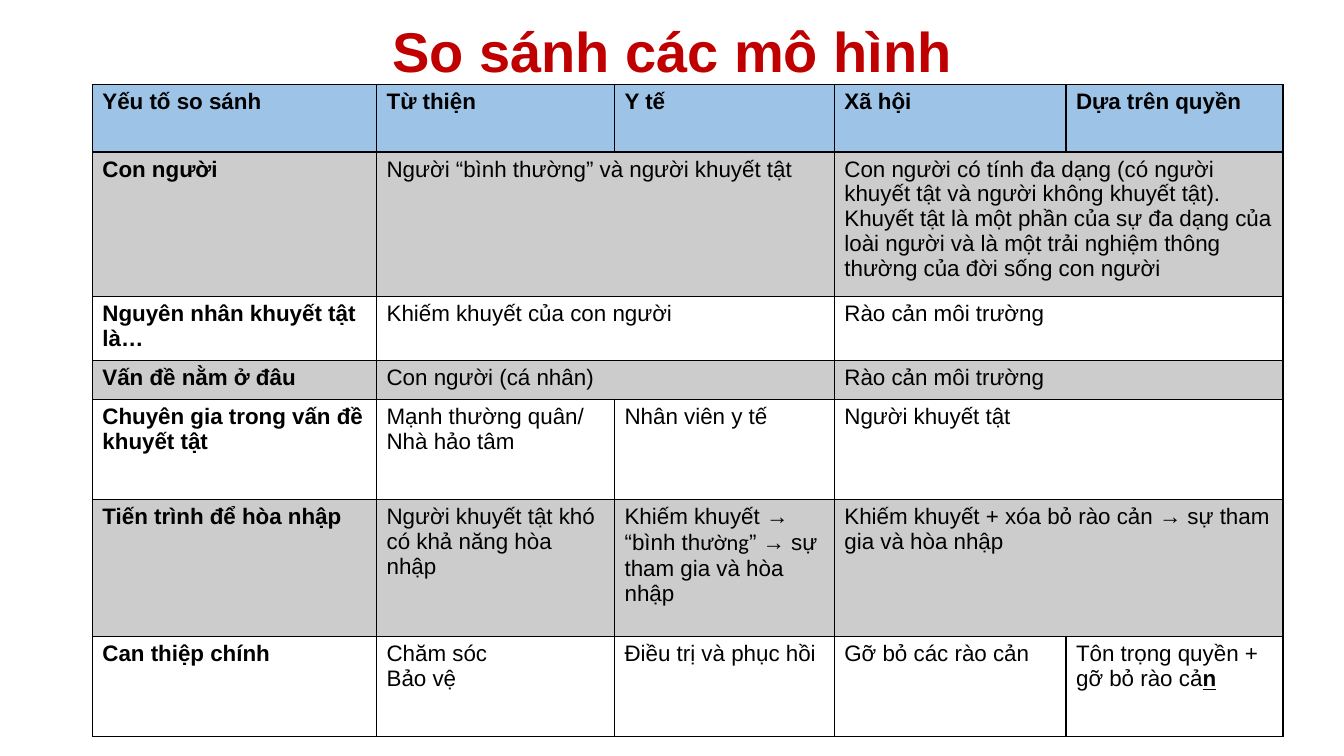
from lxml import etree
from pptx import Presentation
from pptx.dml.color import RGBColor
from pptx.enum import text
from pptx.oxml import ns
from pptx.util import Pt

COLORS = {"title": "C00000", "ink": "000000", "header": "9DC3E6", "band": "000000"}
BAND_ALPHA = 20
TITLE_FONT = {"name": "Arial", "size": Pt(40), "bold": True}
CELL_FONT = {"name": "Arial", "size": Pt(16), "bold": False}

COLUMNS = [203, 170, 157, 165.5, 155]
ROWS = [48, 96.5, 43, 28, 71.5, 98, 71.5]
BANDED = {1, 3, 5}

# None continues the cell on its left; a list holds runs with their own format.
CELLS = [
    ["Yếu tố so sánh", "Từ thiện", "Y tế", "Xã hội", "Dựa trên quyền"],
    ["Con người", "Người “bình thường” và người khuyết tật", None,
     "Con người có tính đa dạng (có người khuyết tật và người không khuyết tật). "
     "Khuyết tật là một phần của sự đa dạng của loài người và là một trải nghiệm "
     "thông thường của đời sống con người", None],
    ["Nguyên nhân khuyết tật là…", "Khiếm khuyết của con người", None,
     "Rào cản môi trường", None],
    ["Vấn đề nằm ở đâu", "Con người (cá nhân)", None, "Rào cản môi trường", None],
    ["Chuyên gia trong vấn đề khuyết tật", "Mạnh thường quân/\nNhà hảo tâm",
     "Nhân viên y tế", "Người khuyết tật", None],
    ["Tiến trình để hòa nhập", "Người khuyết tật khó có khả năng hòa nhập",
     [("Khiếm khuyết → “bình th", {}), ("ường", {"name": "Calibri"}),
      ("” → sự tham gia và hòa nhập", {})],
     "Khiếm khuyết + xóa bỏ rào cản → sự tham gia và hòa nhập", None],
    ["Can thiệp chính", "Chăm sóc\nBảo vệ", "Điều trị và phục hồi", "Gỡ bỏ các rào cản",
     [("Tôn trọng quyền + gỡ bỏ rào cả", {}), ("n", {"bold": True, "underline": True})]],
]


def add_run(p, words, color, **font):
    r = p.add_run()
    r.text = words
    r.font.color.rgb = RGBColor.from_string(COLORS[color])
    for name, value in font.items():
        setattr(r.font, name, value)


def write_cell(tf, content, bold):
    paragraphs = content if isinstance(content, list) else content.split("\n")
    if isinstance(content, list):
        paragraphs = [content]
    else:
        paragraphs = [[(line, {})] for line in paragraphs]
    for i, runs in enumerate(paragraphs):
        p = tf.add_paragraph() if i else tf.paragraphs[0]
        for words, font in runs:
            add_run(p, words, "ink", **{**CELL_FONT, "bold": bold, **font})


def set_border(cell, side, width):
    ln = etree.SubElement(cell._tc.get_or_add_tcPr(), ns.qn(f"a:ln{side}"), w=str(Pt(width)))
    fill = etree.SubElement(ln, ns.qn("a:solidFill"))
    etree.SubElement(fill, ns.qn("a:srgbClr"), val=COLORS["ink"])


def fill_cell(cell, row):
    if row and row not in BANDED:
        cell.fill.background()
        return
    cell.fill.solid()
    cell.fill.fore_color.rgb = RGBColor.from_string(COLORS["band" if row else "header"])
    if row:
        color = cell._tc.tcPr.find(".//" + ns.qn("a:solidFill"))
        color = cell._tc.tcPr.findall(ns.qn("a:solidFill"))[-1][0]
        etree.SubElement(color, ns.qn("a:alpha"), val=str(BAND_ALPHA * 1000))


def add_title(s, left, top, width, height):
    tf = s.shapes.add_textbox(Pt(left), Pt(top), Pt(width), Pt(height)).text_frame
    tf.word_wrap = True
    tf.vertical_anchor = text.MSO_ANCHOR.MIDDLE
    p = tf.paragraphs[0]
    p.alignment = text.PP_ALIGN.CENTER
    p.line_spacing = 0.9
    add_run(p, "So sánh các mô hình", "title", **TITLE_FONT)


def add_comparison(s, left, top):
    table = s.shapes.add_table(len(ROWS), len(COLUMNS), Pt(left), Pt(top),
                               Pt(sum(COLUMNS)), Pt(sum(ROWS))).table
    table.first_row = table.horz_banding = False
    for column, width in zip(table.columns, COLUMNS):
        column.width = Pt(width)
    for row, height in zip(table.rows, ROWS):
        row.height = Pt(height)
    for r, contents in enumerate(CELLS):
        for c, content in enumerate(contents):
            cell = table.cell(r, c)
            for side in "LRTB":
                heavy = (r, side) in ((0, "B"), (1, "T"))
                set_border(cell, side, 2 if heavy else 1)
            fill_cell(cell, r)
            if content is None:
                table.cell(r, c - 1).merge(cell)
            else:
                write_cell(cell.text_frame, content, bold=r == 0 or c == 0)


def main():
    prs = Presentation()
    prs.slide_width, prs.slide_height = Pt(960), Pt(540)
    s = prs.slides.add_slide(prs.slide_layouts[6])
    add_title(s, 66, -3.5, 828, 85)
    add_comparison(s, 66, 60.5)
    prs.save("out.pptx")


if __name__ == "__main__":
    main()
